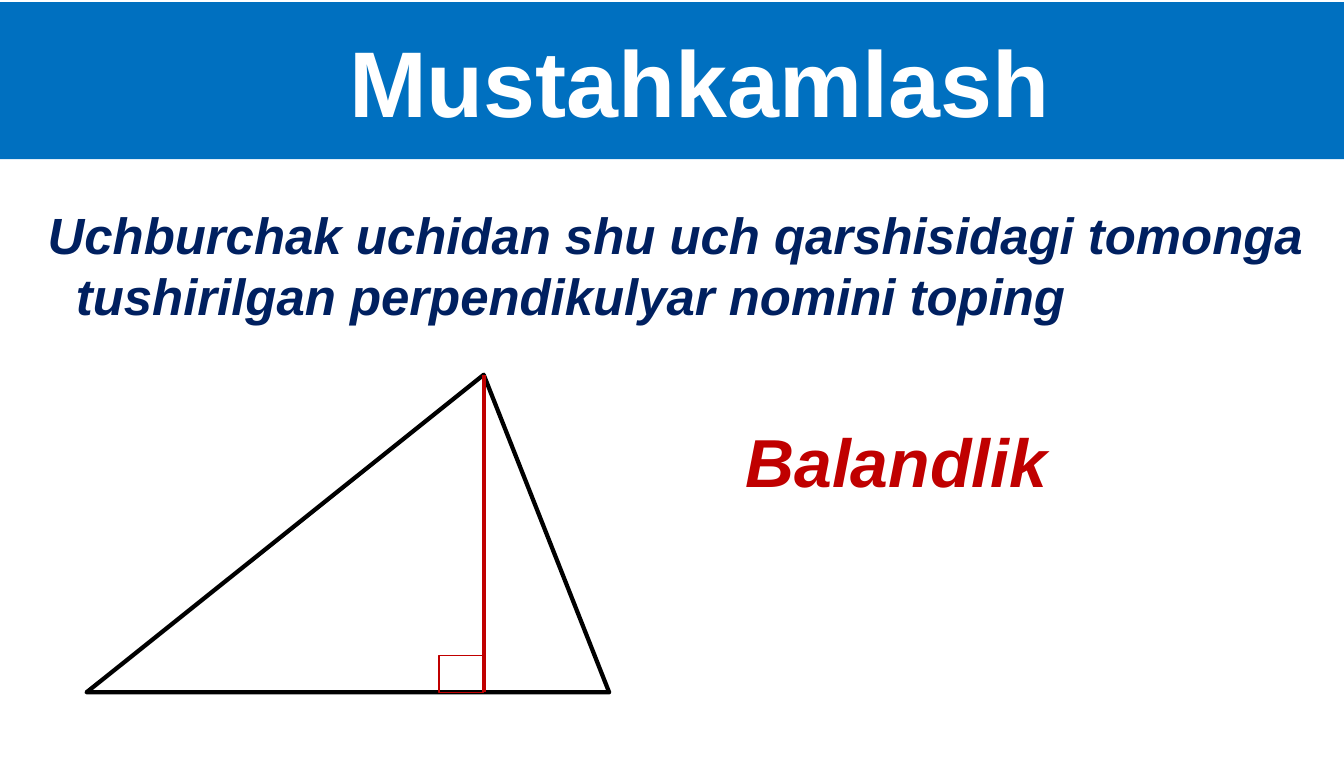
from pptx import Presentation
from pptx.dml.color import RGBColor
from pptx.enum.shapes import MSO_CONNECTOR, MSO_SHAPE
from pptx.enum.text import MSO_ANCHOR, PP_ALIGN
from pptx.oxml.ns import qn
from pptx.util import Pt
from lxml import etree


def color(hex_string):
    return RGBColor.from_string(hex_string)


def write_text(shape, text, size, hex_color, italic=False):
    shape.text_frame.text = text
    font = shape.text_frame.paragraphs[0].runs[0].font
    font.name = "Arial"
    font.size = Pt(size)
    font.bold = True
    font.italic = italic
    font.color.rgb = color(hex_color)


presentation = Presentation()
presentation.slide_width = Pt(950)
presentation.slide_height = Pt(553)
slide = presentation.slides.add_slide(presentation.slide_layouts[5])

# Title banner, its text set slightly right of centre
title = slide.shapes.title
title.left, title.top, title.width, title.height = Pt(0), Pt(1.5), Pt(950), Pt(111)
title.fill.solid()
title.fill.fore_color.rgb = color("0070C0")
write_text(title, "Mustahkamlash", 66, "FFFFFF")
title.text_frame.margin_left = Pt(46)
title.text_frame.vertical_anchor = MSO_ANCHOR.MIDDLE
title.text_frame.paragraphs[0].alignment = PP_ALIGN.CENTER

# Triangle
base_left, base_width, apex_ratio = 61.2, 369.4, 0.76
apex_top, base_y = 265, 489.6
foot_x = base_left + base_width * apex_ratio
triangle = slide.shapes.add_shape(
    MSO_SHAPE.ISOSCELES_TRIANGLE,
    Pt(base_left), Pt(apex_top), Pt(base_width), Pt(base_y - apex_top))
triangle.adjustments[0] = apex_ratio
triangle.shadow.inherit = False
triangle.fill.solid()
triangle.fill.fore_color.rgb = color("FFFFFF")
triangle.line.color.rgb = color("000000")
triangle.line.width = Pt(3)

# Height of the triangle
height_line = slide.shapes.add_connector(
    MSO_CONNECTOR.STRAIGHT, Pt(foot_x), Pt(apex_top), Pt(foot_x), Pt(base_y))
height_line.line.color.rgb = color("C00000")
height_line.line.width = Pt(3)
etree.SubElement(height_line._element.spPr, qn("a:effectLst"))

# Right-angle mark
mark_width, mark_height = 31.7, 26
right_angle = slide.shapes.add_shape(
    MSO_SHAPE.RECTANGLE, Pt(foot_x - mark_width), Pt(base_y - mark_height),
    Pt(mark_width), Pt(mark_height))
right_angle.shadow.inherit = False
right_angle.fill.background()
right_angle.line.color.rgb = color("C00000")
right_angle.line.width = Pt(1)

# Question with a hanging indent
question = slide.shapes.add_textbox(Pt(26.6), Pt(140.4), Pt(907), Pt(94.3))
question.text_frame.word_wrap = True
write_text(
    question,
    "Uchburchak uchidan shu uch qarshisidagi tomonga "
    "tushirilgan perpendikulyar nomini toping",
    36, "002060", italic=True)
properties = question.text_frame.paragraphs[0]._p.get_or_add_pPr()
properties.set("marL", str(Pt(20)))
properties.set("indent", str(-Pt(20)))

# Answer
answer = slide.shapes.add_textbox(Pt(519.8), Pt(293), Pt(230.4), Pt(65.5))
answer.text_frame.word_wrap = False
write_text(answer, "Balandlik", 48, "C00000", italic=True)

presentation.save("out.pptx")
